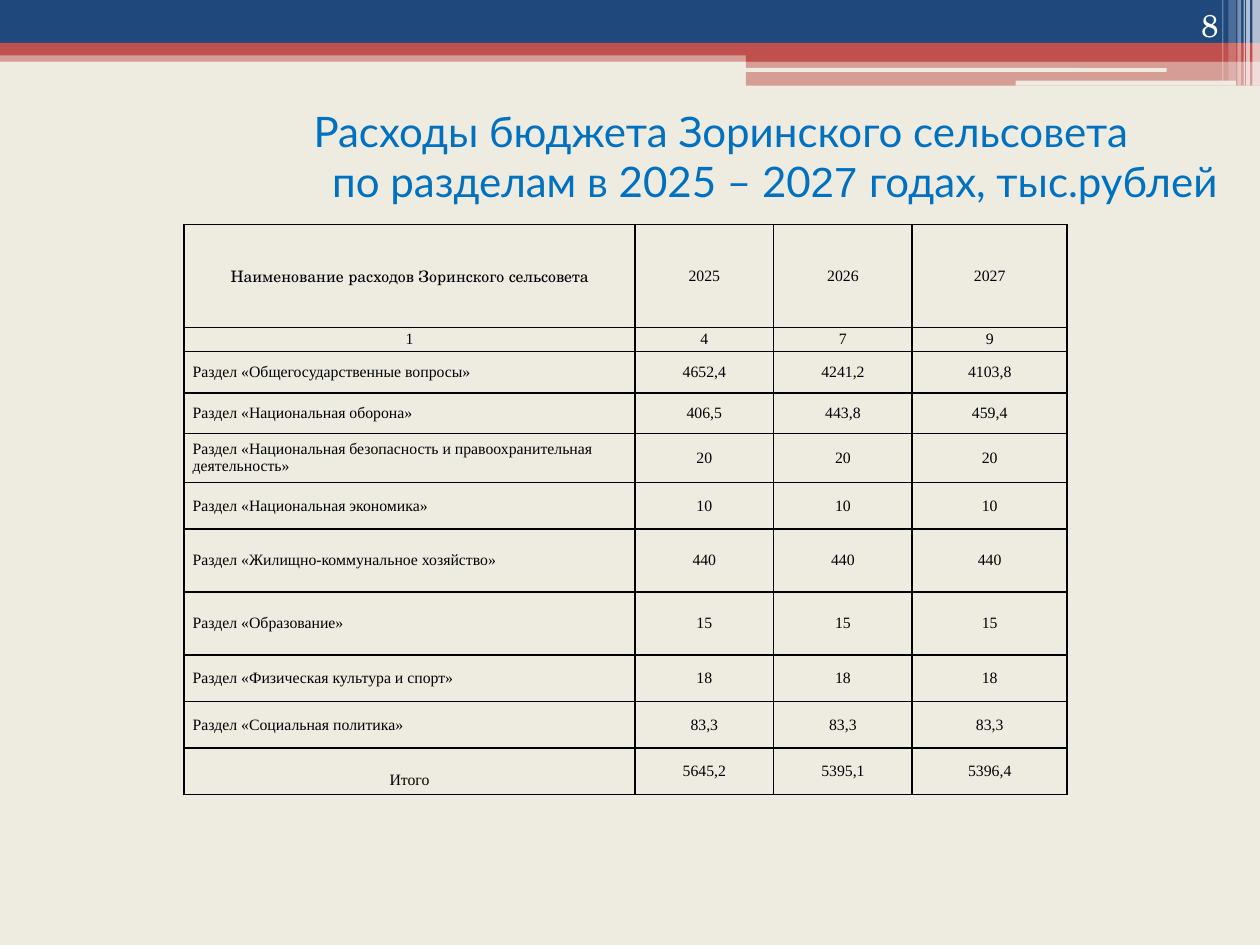
import lxml.etree
import pptx
import pptx.dml.color
import pptx.enum.shapes
import pptx.enum.text
import pptx.oxml.ns
import pptx.util

COLORS = {"paper": "EEECE1", "navy": "1F497D", "red": "C0504D",
          "white": "FFFFFF", "title": "0070C0", "ink": "000000"}
UNIT = pptx.util.Inches(0.1)
SLIDE_COLUMNS, SLIDE_ROWS = 100, 75
ALIGN = pptx.enum.text.PP_ALIGN
MIDDLE = pptx.enum.text.MSO_ANCHOR.MIDDLE
SERIF, SCHOOL, SANS = "Times New Roman", "TeX Gyre Schola", "Lato"

BANDS = [
    (0, 4, 100, 0.9, "red", 50),
    (0, 0, 100, 3.4, "navy", 100),
    (0, 3.4, 100, 1, "red", 100),
    (59.2, 3.9, 40.8, 1, "red", 100),
    (59.2, 4.8, 40.8, 2, "red", 50),
]
SLOTS = [(59.1, 5.4, 33.5, 0.3), (80.6, 6.4, 17.5, 0.4)]
STRIPES = [(99.4, 0.6, 6.8, 65), (98.9, 0.3, 6.8, 65), (98.7, 0.1, 6.8, 60),
           (98.2, 0.3, 6.8, 40), (97.5, 0.6, 6.4, 20), (97, 0.1, 6.4, 30)]

TITLE_LINES = [
    (14.4, [("Расходы бюджета Зоринского сельсовета", SANS)]),
    (23, [("по разделам в 2025 – 20", SANS), ("27 ", "Arial"),
          ("годах, тыс.рублей", SANS)]),
]

COLUMN_WIDTHS = [35.8, 11, 11, 12.3]
BUDGET = [
    (8.2, "Наименование расходов Зоринского сельсовета", "2025", "2026", "2027"),
    (1.9, "1", "4", "7", "9"),
    (3.3, "Раздел «Общегосударственные вопросы»", "4652,4", "4241,2", "4103,8"),
    (3.2, "Раздел «Национальная оборона»", "406,5", "443,8", "459,4"),
    (3.9, "Раздел «Национальная безопасность и правоохранительная деятельность»",
     "20", "20", "20"),
    (3.7, "Раздел «Национальная экономика»", "10", "10", "10"),
    (5, "Раздел «Жилищно-коммунальное хозяйство»", "440", "440", "440"),
    (5, "Раздел «Образование»", "15", "15", "15"),
    (3.7, "Раздел «Физическая культура и спорт»", "18", "18", "18"),
    (3.7, "Раздел «Социальная политика»", "83,3", "83,3", "83,3"),
    (3.7, "Итого", "5645,2", "5395,1", "5396,4"),
]


def grid(*cells):
    """Turn grid counts into slide lengths."""
    return [round(count * UNIT) for count in cells]


def color(name):
    """Return the named colour."""
    return pptx.dml.color.RGBColor.from_string(COLORS[name])


def add_block(slide, left, top, width, height, fill, opacity=100, rounded=False):
    """Add a plain filled block without outline."""
    kinds = pptx.enum.shapes.MSO_SHAPE
    kind = kinds.ROUNDED_RECTANGLE if rounded else kinds.RECTANGLE
    block = slide.shapes.add_shape(kind, *grid(left, top, width, height))
    block.shadow.inherit = False
    block.line.fill.background()
    block.fill.solid()
    block.fill.fore_color.rgb = color(fill)
    if opacity < 100:
        tint = block.fill._xPr.find(".//" + pptx.oxml.ns.qn("a:srgbClr"))
        alpha = lxml.etree.SubElement(tint, pptx.oxml.ns.qn("a:alpha"))
        alpha.set("val", str(opacity * 1000))


def style_font(font, size, face, name):
    """Set size, face and colour of a font."""
    font.size, font.name, font.bold = pptx.util.Pt(size), face, False
    font.color.rgb = color(name)


def add_frame(slide, left, top, width, height, anchor):
    """Add a wrapping text box and return its text frame."""
    frame = slide.shapes.add_textbox(*grid(left, top, width, height)).text_frame
    frame.word_wrap = True
    frame.vertical_anchor = anchor
    return frame


def add_header(slide):
    """Draw the bands, slots and stripes along the top edge."""
    for band in BANDS:
        add_block(slide, *band)
    for slot in SLOTS:
        add_block(slide, *slot, "paper", rounded=True)
    for left, width, height, opacity in STRIPES:
        add_block(slide, left, 0, width, height, "white", opacity)


def add_title(slide):
    """Write the two indented title lines."""
    frame = add_frame(slide, 0, 8.4, SLIDE_COLUMNS, 7.9, MIDDLE)
    for index, (indent, pieces) in enumerate(TITLE_LINES):
        line = frame.add_paragraph() if index else frame.paragraphs[0]
        line.alignment = ALIGN.CENTER
        line._p.get_or_add_pPr().set("marL", str(grid(indent)[0]))
        for words, face in pieces:
            piece = line.add_run()
            piece.text = words
            style_font(piece.font, 24, face, "title")


def add_page_number(slide, number):
    """Write the page number in the top right corner."""
    frame = add_frame(slide, 89.4, 0, 8.3, 4, pptx.enum.text.MSO_ANCHOR.BOTTOM)
    line = frame.paragraphs[0]
    line.text = number
    line.alignment = ALIGN.RIGHT
    style_font(line.font, 18, SCHOOL, "white")


def rule_cell(cell):
    """Give a cell thin borders and no fill."""
    properties = cell._tc.get_or_add_tcPr()
    for side in ("lnL", "lnR", "lnT", "lnB"):
        border = lxml.etree.SubElement(
            properties, pptx.oxml.ns.qn("a:" + side), w=str(pptx.util.Pt(1)))
        fill = lxml.etree.SubElement(border, pptx.oxml.ns.qn("a:solidFill"))
        lxml.etree.SubElement(
            fill, pptx.oxml.ns.qn("a:srgbClr"), val=COLORS["ink"])
    cell.fill.background()


def fill_cell(cell, words, alignment, face):
    """Write one ruled table cell."""
    rule_cell(cell)
    cell.margin_left = cell.margin_right = grid(0.7)[0]
    cell.margin_top = cell.margin_bottom = 0
    cell.vertical_anchor = MIDDLE
    line = cell.text_frame.paragraphs[0]
    line.text = words
    line.alignment = alignment
    style_font(line.font, 9, face, "ink")


def add_budget(slide):
    """Build the table of spending by section."""
    heights = [row[0] for row in BUDGET]
    place = grid(14.6, 17.8, sum(COLUMN_WIDTHS), sum(heights))
    table = slide.shapes.add_table(len(BUDGET), len(COLUMN_WIDTHS), *place).table
    table.first_row = table.horz_banding = False
    for column, width in zip(table.columns, grid(*COLUMN_WIDTHS)):
        column.width = width
    for row, height in zip(table.rows, grid(*heights)):
        row.height = height
    for r, (_, *entries) in enumerate(BUDGET):
        for c, words in enumerate(entries):
            is_section = words.startswith("Раздел")
            face = SCHOOL if r == c == 0 else SERIF
            fill_cell(table.cell(r, c), words,
                      ALIGN.LEFT if is_section else ALIGN.CENTER, face)
    table.cell(len(BUDGET) - 1, 0).margin_top = grid(1.4)[0]


def main():
    """Build and save the budget slide."""
    deck = pptx.Presentation()
    deck.slide_width, deck.slide_height = grid(SLIDE_COLUMNS, SLIDE_ROWS)
    slide = deck.slides.add_slide(deck.slide_layouts[6])
    slide.background.fill.solid()
    slide.background.fill.fore_color.rgb = color("paper")
    add_header(slide)
    add_title(slide)
    add_page_number(slide, "8")
    add_budget(slide)
    deck.save("out.pptx")


if __name__ == "__main__":
    main()
